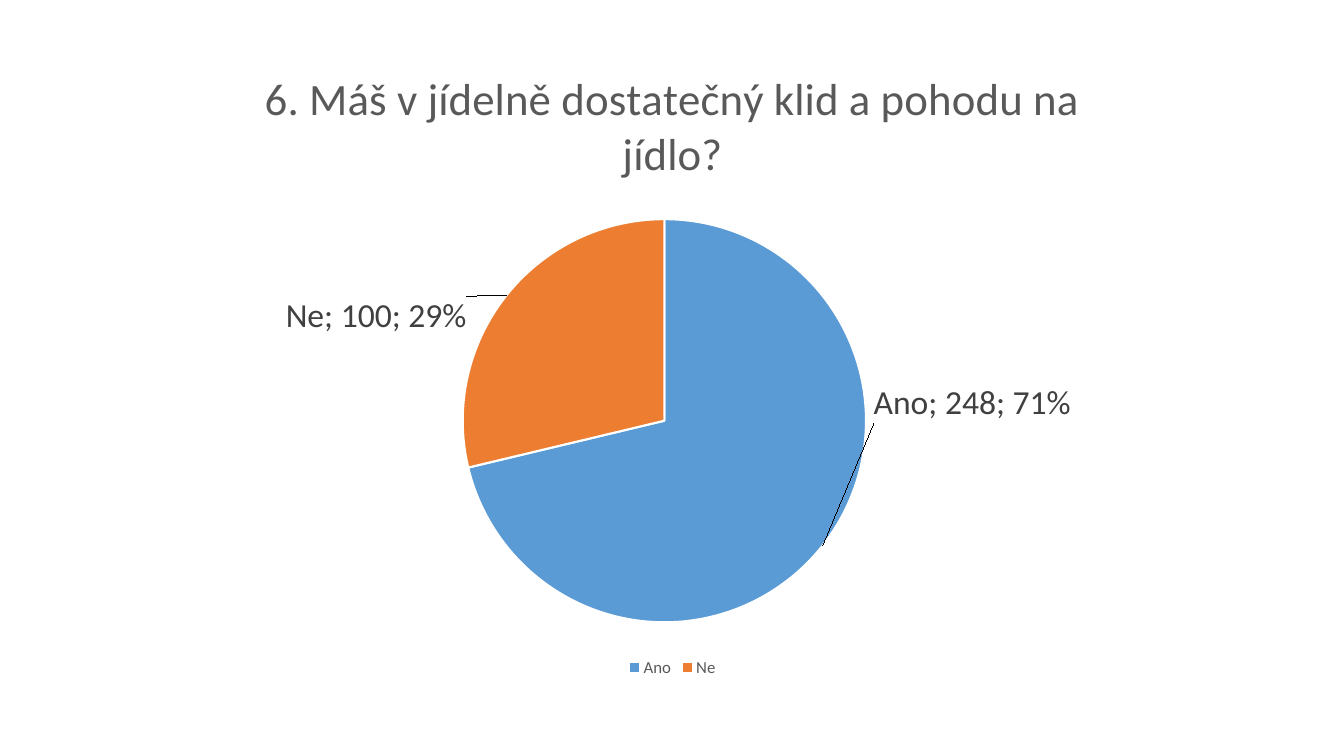
"""Build a slide with a pie chart of answers about calm in the school canteen."""
from dataclasses import dataclass

from lxml.etree import SubElement
from pptx import Presentation
from pptx.chart.chart import Chart
from pptx.chart.data import CategoryChartData
from pptx.chart.point import Point
from pptx.dml.color import RGBColor
from pptx.enum.chart import XL_CHART_TYPE, XL_LABEL_POSITION, XL_LEGEND_POSITION
from pptx.oxml import parse_xml
from pptx.oxml.ns import nsdecls, qn
from pptx.text.text import Font
from pptx.util import Inches, Pt

BLUE = RGBColor(0x5B, 0x9B, 0xD5)
ORANGE = RGBColor(0xED, 0x7D, 0x31)
WHITE = RGBColor(0xFF, 0xFF, 0xFF)
BLACK = RGBColor(0x00, 0x00, 0x00)
TITLE_GRAY = RGBColor(0x59, 0x59, 0x59)
LABEL_GRAY = RGBColor(0x40, 0x40, 0x40)

QUESTION = "6. Máš v jídelně dostatečný klid a pohodu na jídlo?"


@dataclass(frozen=True)
class Answer:
    """One slice, with its label shift as a share of the chart size."""

    name: str
    count: int
    color: RGBColor
    shift_x: float
    shift_y: float


ANSWERS = (
    Answer("Ano", 248, BLUE, 0.04, -0.26),
    Answer("Ne", 100, ORANGE, -0.03, 0.07),
)


def style_font(font: Font, size: float, color: RGBColor) -> None:
    """Set the typeface, size and colour of a font."""
    font.name = "Calibri"
    font.size = Pt(size)
    font.bold = False
    font.color.rgb = color


def show_label_parts(labels) -> None:
    """Show category, value and percentage, parted by semicolons."""
    for tag in ("c:showCatName", "c:showVal", "c:showPercent"):
        labels.find(qn(tag)).set("val", "1")
    separator = SubElement(labels, qn("c:separator"))
    separator.text = "; "
    labels.find(qn("c:showBubbleSize")).addnext(separator)


def manual_layout(settings: str):
    """Return a layout element holding the given settings."""
    return parse_xml(
        f"<c:layout {nsdecls('c')}><c:manualLayout>{settings}"
        "</c:manualLayout></c:layout>"
    )


def style_slice(point: Point, answer: Answer) -> None:
    """Colour a slice and move its label."""
    point.format.fill.solid()
    point.format.fill.fore_color.rgb = answer.color
    point.format.line.color.rgb = WHITE
    point.format.line.width = Pt(1.5)
    style_font(point.data_label.font, 24, LABEL_GRAY)
    point.data_label.position = XL_LABEL_POSITION.OUTSIDE_END


def place_label(label, answer: Answer) -> None:
    """Shift a label away from its default place."""
    shift = f'<c:x val="{answer.shift_x}"/><c:y val="{answer.shift_y}"/>'
    label.find(qn("c:idx")).addnext(manual_layout(shift))
    show_label_parts(label)


def place_pie(chart: Chart) -> None:
    """Fix the inner plot area of the pie."""
    plot_area = chart.element.find(".//" + qn("c:plotArea"))
    for layout in plot_area.findall(qn("c:layout")):
        plot_area.remove(layout)
    plot_area.insert(0, manual_layout(
        '<c:layoutTarget val="inner"/><c:xMode val="edge"/><c:yMode val="edge"/>'
        '<c:x val="0.319"/><c:y val="0.279"/><c:w val="0.348"/><c:h val="0.629"/>'
    ))


def style_chart(chart: Chart) -> None:
    """Set the title, legend, slices and labels."""
    style_font(chart.font, 10, BLACK)
    chart.has_title = True
    title_run = chart.chart_title.text_frame.paragraphs[0].add_run()
    title_run.text = QUESTION
    style_font(title_run.font, 32, TITLE_GRAY)
    chart.chart_title.include_in_layout = False
    chart.has_legend = True
    chart.legend.position = XL_LEGEND_POSITION.BOTTOM
    chart.legend.include_in_layout = False
    style_font(chart.legend.font, 12, TITLE_GRAY)
    plot = chart.plots[0]
    plot.vary_by_categories = True
    series = plot.series[0]
    style_font(series.data_labels.font, 24, LABEL_GRAY)
    series.data_labels.position = XL_LABEL_POSITION.OUTSIDE_END
    for index, answer in enumerate(ANSWERS):
        style_slice(series.points[index], answer)
    labels = chart.element.find(".//" + qn("c:ser")).find(qn("c:dLbls"))
    show_label_parts(labels)
    for label, answer in zip(labels.findall(qn("c:dLbl")), ANSWERS):
        place_label(label, answer)
    place_pie(chart)


def main() -> None:
    """Create and save the presentation."""
    presentation = Presentation()
    presentation.slide_width = Inches(13.33)
    presentation.slide_height = Inches(7.5)
    slide = presentation.slides.add_slide(presentation.slide_layouts[6])
    chart_data = CategoryChartData()
    chart_data.categories = [answer.name for answer in ANSWERS]
    chart_data.add_series(QUESTION, [answer.count for answer in ANSWERS])
    frame = slide.shapes.add_chart(
        XL_CHART_TYPE.PIE, Inches(0.92), Inches(0.4), Inches(11.5), Inches(6.36),
        chart_data,
    )
    style_chart(frame.chart)
    presentation.save("out.pptx")


if __name__ == "__main__":
    main()
